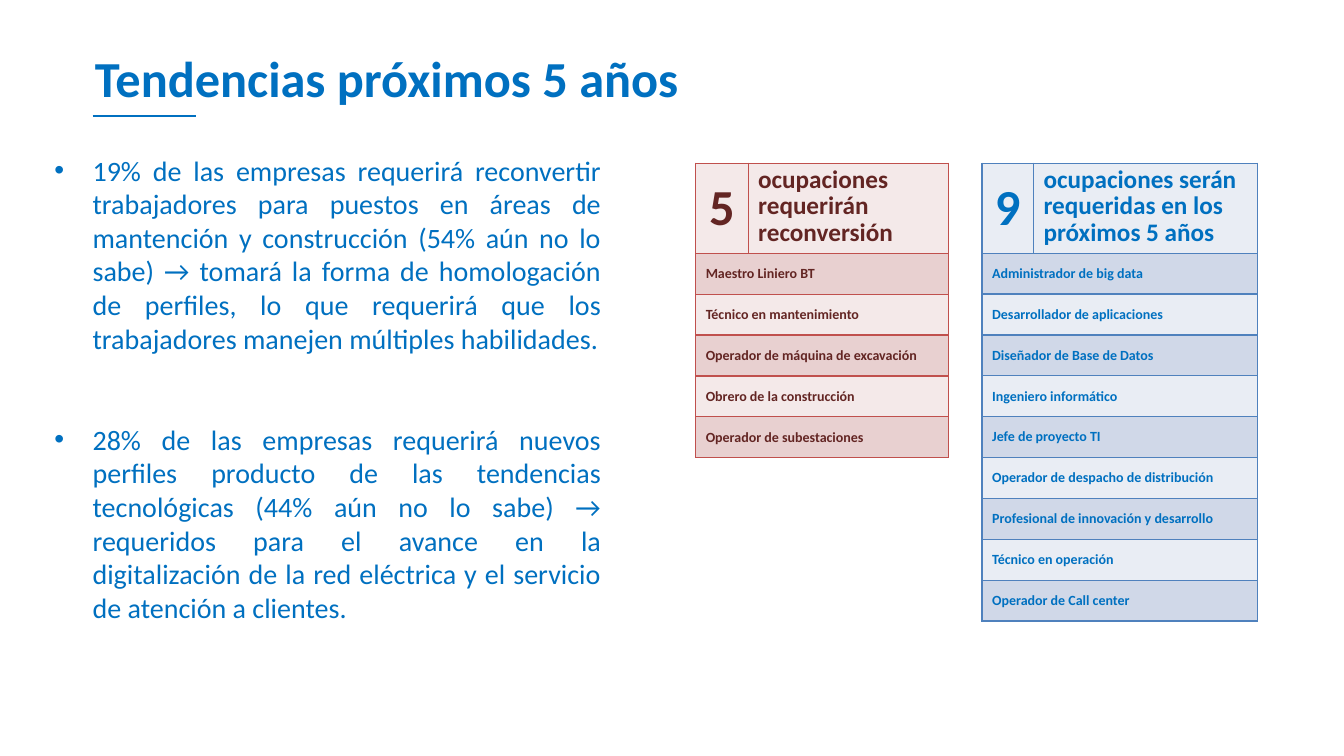
"""Build the slide on five-year workforce trends."""
from lxml import etree
from pptx import Presentation
from pptx.dml.color import RGBColor
from pptx.enum import shapes, text
from pptx.oxml import ns
from pptx.util import Inches, Pt

BLUE = "0070C0"
TITLE = "Tendencias próximos 5 años"
POINTS = [
    (1.47, "19% de las empresas requerirá reconvertir trabajadores para puestos "
           "en áreas de mantención y construcción (54% aún no lo sabe) → tomará la "
           "forma de homologación de perfiles, lo que requerirá que los "
           "trabajadores manejen múltiples habilidades."),
    (4.14, "28% de las empresas requerirá nuevos perfiles producto de las "
           "tendencias tecnológicas (44% aún no lo sabe) → requeridos para el "
           "avance en la digitalización de la red eléctrica y el servicio de "
           "atención a clientes."),
]
TABLES = [
    dict(left=6.9, high=2.92, cols=(0.52, 1.99), ink="632523", edge="C0504D",
         fills=("F4E9E9", "E8D0D0"), head="ocupaciones requerirán reconversión",
         jobs=["Maestro Liniero BT", "Técnico en mantenimiento",
               "Operador de máquina de excavación", "Obrero de la construcción",
               "Operador de subestaciones"]),
    dict(left=9.74, high=4.54, cols=(0.51, 2.22), ink=BLUE, edge="4F81BD",
         fills=("E9EDF4", "D0D8E8"),
         head="ocupaciones serán requeridas en los próximos 5 años",
         jobs=["Administrador de big data", "Desarrollador de aplicaciones",
               "Diseñador de Base de Datos", "Ingeniero informático",
               "Jefe de proyecto TI", "Operador de despacho de distribución",
               "Profesional de innovación y desarrollo", "Técnico en operación",
               "Operador de Call center"]),
]
TOP, HEAD = 1.62, 0.89


def rgb(code):
    """Turn a hex string into a colour."""
    return RGBColor.from_string(code)


def add(node, tag, **attrs):
    """Append a drawing element to a node."""
    return etree.SubElement(node, ns.qn(tag), **attrs)


def write(frame, words, size, ink=BLUE, bold=False, align=text.PP_ALIGN.LEFT,
          bullet=False, lead=None):
    """Write one formatted paragraph into a text frame."""
    para = frame.paragraphs[0]
    if bullet:
        prop = para._p.get_or_add_pPr()
        prop.set("marL", str(Inches(0.38)))
        prop.set("indent", str(Inches(-0.38)))
        add(prop, "a:buFont", typeface="Arial")
        add(prop, "a:buChar", char="•")
    para.alignment = align
    if lead:
        para.line_spacing = Pt(lead)
    run = para.add_run()
    run.text = words
    font = run.font
    font.name, font.size, font.bold = "Calibri", Pt(size), bold
    font.color.rgb = rgb(ink)


def style(cell, fill, edge):
    """Set the borders, fill and anchor of a cell."""
    prop = cell._tc.get_or_add_tcPr()
    for side in "LRTB":
        line = add(prop, f"a:ln{side}", w=str(Pt(1)))
        add(add(line, "a:solidFill"), "a:srgbClr", val=edge)
    cell.fill.solid()
    cell.fill.fore_color.rgb = rgb(fill)
    cell.vertical_anchor = text.MSO_ANCHOR.MIDDLE


def draw_table(slide, left, high, cols, ink, edge, fills, head, jobs):
    """Draw a count, its heading and the list of jobs."""
    grid = slide.shapes.add_table(
        len(jobs) + 1, 2, Inches(left), Inches(TOP),
        Inches(sum(cols)), Inches(high)).table
    grid.first_row = grid.horz_banding = False
    for col, wide in zip(grid.columns, cols):
        col.width = Inches(wide)
    step = (high - HEAD) / len(jobs)
    for i, row in enumerate(grid.rows):
        row.height = Inches(step if i else HEAD)
        for cell in row.cells:
            style(cell, fills[i % 2], edge)
    write(grid.cell(0, 0).text_frame, str(len(jobs)), 36, ink, True,
          text.PP_ALIGN.CENTER)
    write(grid.cell(0, 1).text_frame, head, 18, ink, True, lead=19)
    for i, job in enumerate(jobs, 1):
        grid.cell(i, 0).merge(grid.cell(i, 1))
        write(grid.cell(i, 0).text_frame, job, 10, ink, True)


def main():
    """Build and save the slide."""
    deck = Presentation()
    deck.slide_width, deck.slide_height = Inches(13.33), Inches(7.5)
    slide = deck.slides.add_slide(deck.slide_layouts[5])

    title = slide.shapes.title
    title.left, title.top = Inches(0.84), Inches(0.41)
    title.width, title.height = Inches(6.06), Inches(0.71)
    title.fill.solid()
    title.fill.fore_color.rgb = rgb("FFFFFF")
    frame = title.text_frame
    frame.word_wrap = False
    frame.auto_size = text.MSO_AUTO_SIZE.NONE
    frame.vertical_anchor = text.MSO_ANCHOR.MIDDLE
    write(frame, TITLE, 36, bold=True)

    rule = slide.shapes.add_connector(
        shapes.MSO_CONNECTOR.STRAIGHT, Inches(0.92), Inches(1.15),
        Inches(1.94), Inches(1.15))
    rule.line.color.rgb = rgb(BLUE)
    rule.line.width = Pt(1.5)
    add(rule._element.spPr, "a:effectLst")

    for top, words in POINTS:
        box = slide.shapes.add_textbox(
            Inches(0.44), Inches(top), Inches(5.62), Inches(2.46))
        box.text_frame.word_wrap = True
        write(box.text_frame, words, 20, align=text.PP_ALIGN.JUSTIFY, bullet=True)

    for table in TABLES:
        draw_table(slide, **table)
    deck.save("out.pptx")


if __name__ == "__main__":
    main()
